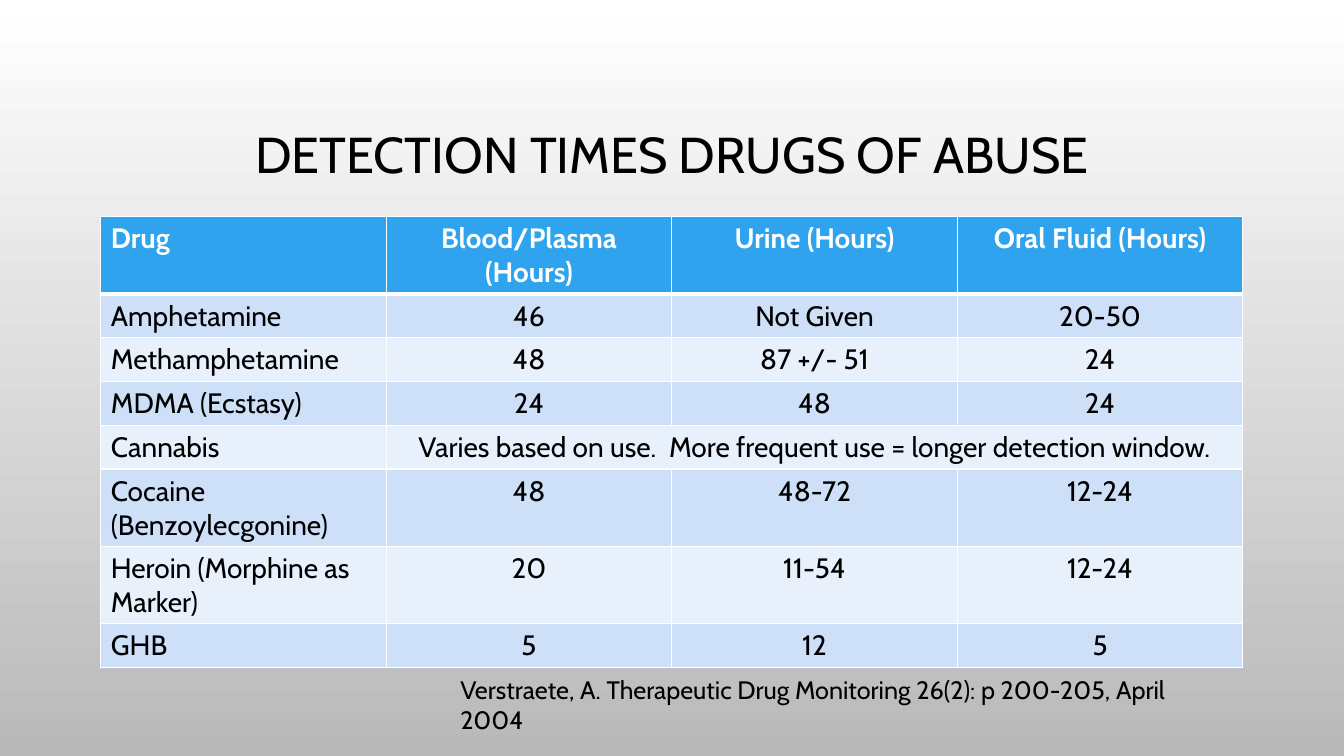
from lxml import etree
from pptx import Presentation
from pptx import util as u
from pptx.dml.color import RGBColor
from pptx.enum import text
from pptx.oxml import ns

FONT = "Cabin"
COLORS = {
    "black": "000000", "white": "FFFFFF", "backdrop_end": "B9B9B9",
    "header": "2FA3EE", "odd_row": "CDE0F8", "even_row": "E8F0FC",
}
DETECTION_TIMES = [
    ["Drug", "Blood/Plasma (Hours)", "Urine (Hours)", "Oral Fluid (Hours)"],
    ["Amphetamine", "46", "Not Given", "20-50"],
    ["Methamphetamine", "48", "87 +/- 51", "24"],
    ["MDMA (Ecstasy)", "24", "48", "24"],
    ["Cannabis", "Varies based on use.  More frequent use = longer detection window."],
    ["Cocaine (Benzoylecgonine)", "48", "48-72", "12-24"],
    ["Heroin (Morphine as Marker)", "20", "11-54", "12-24"],
    ["GHB", "5", "12", "5"],
]


def rgb(name):
    return RGBColor.from_string(COLORS[name])


def write(frame, wording, size, color="black", bold=False, centered=False, spacing=1.0):
    paragraph = frame.paragraphs[0]
    paragraph.alignment = text.PP_ALIGN.CENTER if centered else text.PP_ALIGN.LEFT
    paragraph.line_spacing = spacing
    run = paragraph.add_run()
    run.text = wording
    run.font.name = FONT
    run.font.size = u.Pt(size)
    run.font.bold = bold
    run.font.color.rgb = rgb(color)


def paint_background(slide):
    fill = slide.background.fill
    fill.gradient()
    fill.gradient_angle = 270
    for stop, color in zip(fill.gradient_stops, ("white", "backdrop_end")):
        stop.color.rgb = rgb(color)


def add_text(slide, wording, left, top, width, height,
             anchor=text.MSO_ANCHOR.TOP, **text_format):
    box = slide.shapes.add_textbox(u.Cm(left), u.Cm(top), u.Cm(width), u.Cm(height))
    box.text_frame.word_wrap = True
    box.text_frame.vertical_anchor = anchor
    write(box.text_frame, wording, **text_format)


def set_borders(cell, **widths):
    properties = cell._tc.get_or_add_tcPr()
    for side in "LRTB":
        width = u.Pt(widths.get(side, 1))
        line = etree.SubElement(properties, ns.qn(f"a:ln{side}"), w=str(width))
        fill = etree.SubElement(line, ns.qn("a:solidFill"))
        etree.SubElement(fill, ns.qn("a:srgbClr"), val=COLORS["white"])


def add_detection_table(slide, rows, left, top, width, row_height):
    columns = len(rows[0])
    table = slide.shapes.add_table(
        len(rows), columns, u.Cm(left), u.Cm(top),
        u.Cm(width), u.Cm(row_height * len(rows))).table
    table.horz_banding = False

    for r, entries in enumerate(rows):
        is_header = r == 0
        band = "header" if is_header else "odd_row" if r % 2 else "even_row"
        for c in range(columns):
            cell = table.cell(r, c)
            # The line under the header is heavier than the grid
            set_borders(cell, B=3 if is_header else 1, T=3 if r == 1 else 1)
            cell.fill.solid()
            cell.fill.fore_color.rgb = rgb(band)
        # A short row stretches its last entry to the right edge
        if len(entries) < columns:
            table.cell(r, len(entries) - 1).merge(table.cell(r, columns - 1))
        for c, entry in enumerate(entries):
            write(table.cell(r, c).text_frame, entry, size=20, bold=is_header,
                  color="white" if is_header else "black", centered=c > 0)


def main():
    deck = Presentation()
    deck.slide_width, deck.slide_height = u.Cm(33.87), u.Cm(19.05)
    slide = deck.slides.add_slide(deck.slide_layouts[6])
    paint_background(slide)

    # Title
    add_text(slide, "DETECTION TIMES DRUGS OF ABUSE", 2.54, 1.73, 28.78, 4.45,
             anchor=text.MSO_ANCHOR.MIDDLE, size=36, centered=True, spacing=0.9)
    # Detection times
    add_detection_table(slide, DETECTION_TIMES, 2.54, 5.46, 28.78, 1.03)
    # Citation
    add_text(slide, "Verstraete, A. Therapeutic Drug Monitoring 26(2): p 200-205, April 2004",
             11.35, 16.87, 19.33, 1.02, size=18)
    deck.save("out.pptx")


if __name__ == "__main__":
    main()
